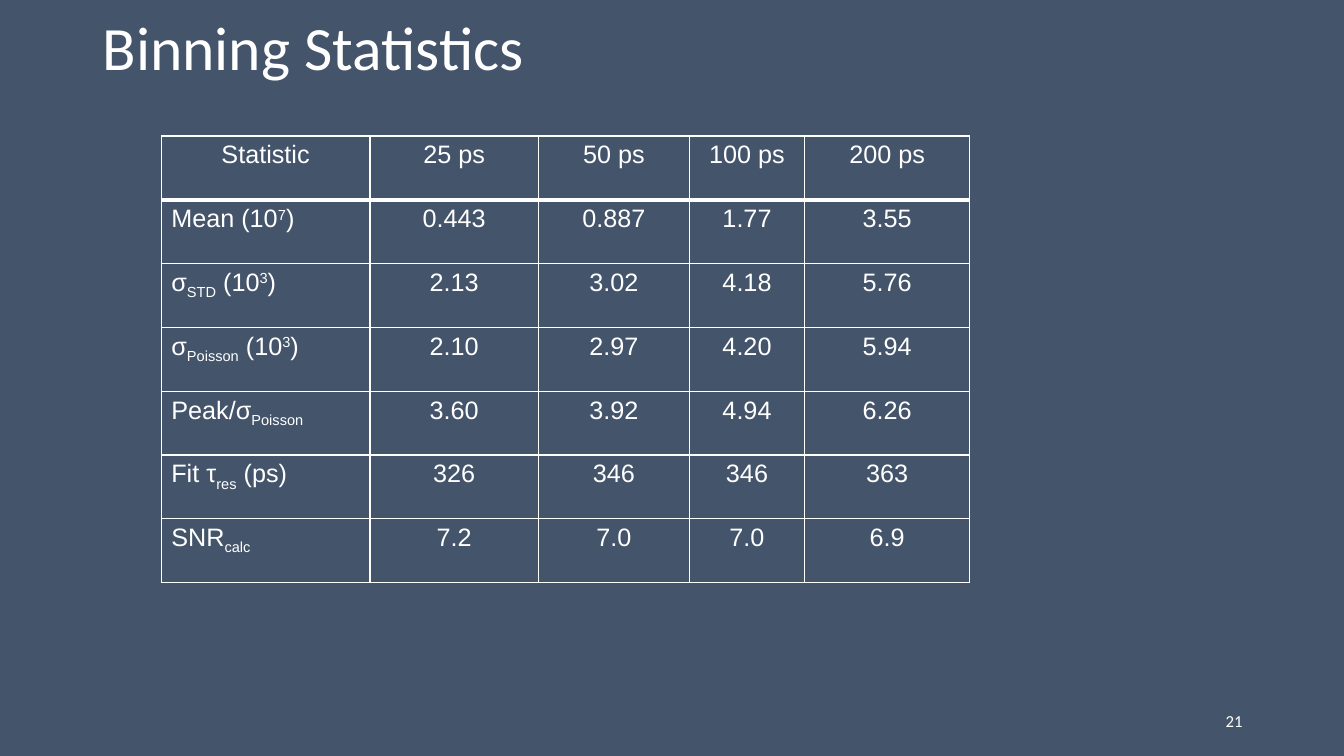
from lxml import etree
from pptx import Presentation
from pptx import util as u
from pptx.dml.color import RGBColor
from pptx.enum import text
from pptx.oxml import ns

HUES = {"back": "44546A", "ink": "FFFFFF"}
WIDE, HIGH = 13.33, 7.5
COLS = [2.07, 1.67, 1.5, 1.14, 1.64]
ROW = 0.633
LEFT, MID, RIGHT = text.PP_ALIGN.LEFT, text.PP_ALIGN.CENTER, text.PP_ALIGN.RIGHT
SHIFT = {"^": 30000, "_": -25000}

# A piece that starts with ^ is raised, one that starts with _ is lowered
STATS = [
    (["Statistic"], "25 ps", "50 ps", "100 ps", "200 ps"),
    (["Mean (10", "^7", ")"], "0.443", "0.887", "1.77", "3.55"),
    (["σ", "_STD", " (10", "^3", ")"], "2.13", "3.02", "4.18", "5.76"),
    (["σ", "_Poisson", " (10", "^3", ")"], "2.10", "2.97", "4.20", "5.94"),
    (["Peak/σ", "_Poisson"], "3.60", "3.92", "4.94", "6.26"),
    (["Fit τ", "_res", " (ps)"], "326", "346", "346", "363"),
    (["SNR", "_calc"], "7.2", "7.0", "7.0", "6.9"),
]


def write(frame, parts, size=18, face="Arial", align=LEFT, lead=None):
    """Fill the first paragraph of a frame with pieces of text."""
    para = frame.paragraphs[0]
    para.alignment = align
    if lead:
        para.line_spacing = lead
    for part in parts:
        run = para.add_run()
        shift = SHIFT.get(part[0])
        run.text = part[1:] if shift else part
        run.font.size = u.Pt(size)
        run.font.name = face
        run.font.bold = False
        run.font.color.rgb = RGBColor.from_string(HUES["ink"])
        if shift:
            run.font._element.set("baseline", str(shift))


def label(slide, words, x, y, w, h, **form):
    """Add a text box placed by shares of the slide's size."""
    box = slide.shapes.add_textbox(
        u.Inches(x * WIDE), u.Inches(y * HIGH), u.Inches(w * WIDE), u.Inches(h * HIGH))
    box.text_frame.word_wrap = True
    box.text_frame.vertical_anchor = text.MSO_ANCHOR.MIDDLE
    write(box.text_frame, [words], **form)


def edge(cell, **sides):
    """Draw the cell's borders, with widths in points."""
    props = cell._tc.get_or_add_tcPr()
    for spot, side in enumerate("LRTB"):
        line = etree.Element(ns.qn(f"a:ln{side}"), w=str(u.Pt(sides.get(side, 1))))
        fill = etree.SubElement(line, ns.qn("a:solidFill"))
        etree.SubElement(fill, ns.qn("a:srgbClr"), val=HUES["ink"])
        props.insert(spot, line)


def grid(slide, rows, x, y):
    """Add the table of statistics."""
    table = slide.shapes.add_table(
        len(rows), len(COLS), u.Inches(x * WIDE), u.Inches(y * HIGH),
        u.Inches(sum(COLS)), u.Inches(ROW * len(rows))).table
    table.first_row = table.horz_banding = False
    for col, width in zip(table.columns, COLS):
        col.width = u.Inches(width)
    for r, row in enumerate(rows):
        table.rows[r].height = u.Inches(ROW)
        for c, item in enumerate(row):
            cell = table.cell(r, c)
            cell.fill.background()
            parts = [item] if c else item
            write(cell.text_frame, parts, align=LEFT if r and not c else MID)
            # Heavy rule under the header
            edge(cell, T=3 if r == 1 else 1, B=3 if r == 0 else 1)


def main():
    deck = Presentation()
    deck.slide_width, deck.slide_height = u.Inches(WIDE), u.Inches(HIGH)
    slide = deck.slides.add_slide(deck.slide_layouts[6])
    back = slide.background.fill
    back.solid()
    back.fore_color.rgb = RGBColor.from_string(HUES["back"])

    # Title, table and page number
    label(slide, "Binning Statistics", 0.069, 0, 0.863, 0.133,
          size=44, face="Calibri", lead=0.9)
    grid(slide, STATS, 0.12, 0.18)
    label(slide, "21", 0.707, 0.927, 0.225, 0.053,
          size=12, face="Calibri", align=RIGHT)
    deck.save("out.pptx")


if __name__ == "__main__":
    main()
